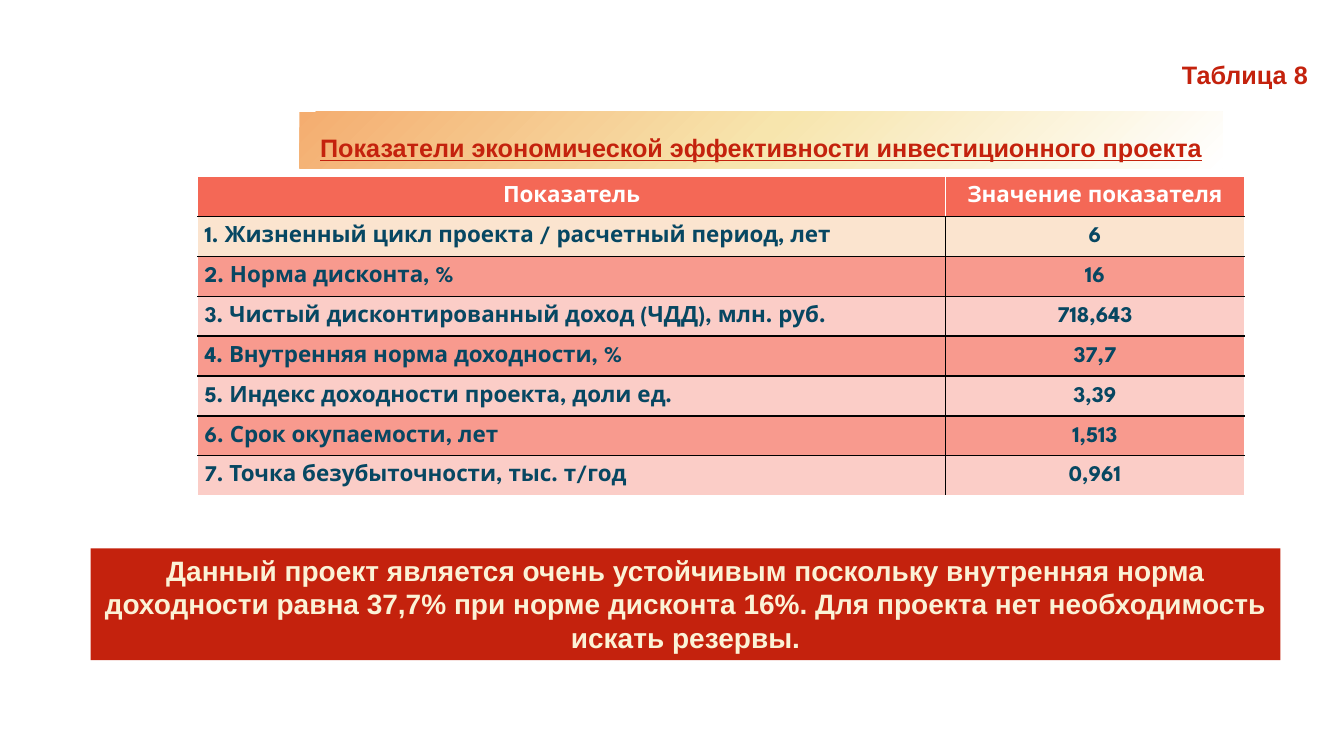
from copy import deepcopy
from dataclasses import dataclass

from pptx import Presentation
from pptx import util as u
from pptx.dml.color import RGBColor
from pptx.enum import shapes, text
from pptx.oxml import parse_xml
from pptx.oxml.ns import nsdecls, qn

RED, NAVY, WHITE, BLACK, CREAM = "C4220D", "074762", "FFFFFF", "000000", "FBF2D6"
HEADER_FILL, FIRST_FILL, DARK_FILL, LIGHT_FILL = "F46856", "FBE4CF", "F89A8E", "FBCDC7"
TITLE_GRADIENT = [(0, "F4AD70"), (0.5, "F7E5AD"), (1, WHITE)]
LEFT, CENTER, RIGHT = text.PP_ALIGN.LEFT, text.PP_ALIGN.CENTER, text.PP_ALIGN.RIGHT


@dataclass
class Style:
    size: float
    color: str
    font: str = "Arial"
    underline: bool = False
    spacing: float = 1.0


@dataclass
class Indicator:
    name: str
    value: str
    fill: str


INDICATORS = [
    Indicator("Показатель", "Значение показателя", HEADER_FILL),
    Indicator("1. Жизненный цикл проекта / расчетный период, лет", "6", FIRST_FILL),
    Indicator("2. Норма дисконта, %", "16", DARK_FILL),
    Indicator("3. Чистый дисконтированный доход (ЧДД), млн. руб.", "718,643", LIGHT_FILL),
    Indicator("4. Внутренняя норма доходности, %", "37,7", DARK_FILL),
    Indicator("5. Индекс доходности проекта, доли ед.", "3,39", LIGHT_FILL),
    Indicator("6. Срок окупаемости, лет", "1,513", DARK_FILL),
    Indicator("7. Точка безубыточности, тыс. т/год", "0,961", LIGHT_FILL),
]


def rgb(value: str) -> RGBColor:
    return RGBColor.from_string(value)


def write(frame, content: str, style: Style, alignment) -> None:
    paragraph = frame.paragraphs[0]
    paragraph.alignment = alignment
    paragraph.line_spacing = style.spacing
    run = paragraph.add_run()
    run.text = content
    run.font.name = style.font
    run.font.size = u.Pt(style.size)
    run.font.bold = True
    run.font.underline = style.underline
    run.font.color.rgb = rgb(style.color)


def add_box(slide, left: float, top: float, width: float, height: float):
    shape = slide.shapes.add_shape(
        shapes.MSO_SHAPE.RECTANGLE,
        u.Inches(left), u.Inches(top), u.Inches(width), u.Inches(height))
    shape.shadow.inherit = False
    shape.line.fill.background()
    shape.text_frame.word_wrap = True
    return shape


def fill_gradient(shape, stops: list) -> None:
    shape.fill.gradient()
    shape.fill.gradient_angle = 315
    first = shape._element.spPr.find(".//" + qn("a:gs"))
    first.addnext(deepcopy(first))
    for stop, (position, color) in zip(shape.fill.gradient_stops, stops):
        stop.position = position
        stop.color.rgb = rgb(color)


def set_borders(cell, colors: dict) -> None:
    properties = cell._tc.get_or_add_tcPr()
    for side in "LRTB":
        properties.append(parse_xml(
            f'<a:ln{side} {nsdecls("a")} w="12700"><a:solidFill>'
            f'<a:srgbClr val="{colors[side]}"/></a:solidFill></a:ln{side}>'))


def add_indicator_table(slide) -> None:
    last = len(INDICATORS) - 1
    height = u.Inches(3.17)
    table = slide.shapes.add_table(
        len(INDICATORS), 2, u.Inches(1.96), u.Inches(1.75), u.Inches(10.38), height).table
    for column, width in zip(table.columns, (7.42, 2.96)):
        column.width = u.Inches(width)
    for row, indicator in enumerate(INDICATORS):
        table.rows[row].height = height // len(INDICATORS)
        header = row == 0
        style = Style(16, WHITE if header else NAVY, "League Spartan", spacing=1.07)
        for column, content in enumerate((indicator.name, indicator.value)):
            cell = table.cell(row, column)
            cell.margin_left = cell.margin_right = u.Inches(0.07)
            cell.margin_top = cell.margin_bottom = 0
            cell.vertical_anchor = text.MSO_ANCHOR.MIDDLE
            inner = WHITE if header else BLACK
            set_borders(cell, {
                "L": inner if column else WHITE,
                "R": WHITE if column else inner,
                "T": inner,
                "B": WHITE if row == last else BLACK,
            })
            cell.fill.solid()
            cell.fill.fore_color.rgb = rgb(indicator.fill)
            write(cell.text_frame, content, style, CENTER if header or column else LEFT)


def main() -> None:
    presentation = Presentation()
    presentation.slide_width = u.Inches(13.33)
    presentation.slide_height = u.Inches(7.5)
    slide = presentation.slides.add_slide(presentation.slide_layouts[6])

    # Table number
    number = slide.shapes.add_textbox(
        u.Inches(11.6), u.Inches(0.54), u.Inches(1.47), u.Inches(0.4))
    number.text_frame.word_wrap = False
    write(number.text_frame, "Таблица 8", Style(18, RED), RIGHT)

    # Title on a gradient band
    title = add_box(slide, 2.97, 1.11, 9.16, 0.56)
    fill_gradient(title, TITLE_GRADIENT)
    title.text_frame.vertical_anchor = text.MSO_ANCHOR.MIDDLE
    write(title.text_frame, "Показатели экономической эффективности инвестиционного проекта",
          Style(18, RED, underline=True, spacing=1.5), CENTER)

    # Indicators
    add_indicator_table(slide)

    # Conclusion
    conclusion = add_box(slide, 0.9, 5.44, 11.8, 1.11)
    conclusion.fill.solid()
    conclusion.fill.fore_color.rgb = rgb(RED)
    conclusion.text_frame.vertical_anchor = text.MSO_ANCHOR.TOP
    write(conclusion.text_frame,
          "Данный проект является очень устойчивым поскольку внутренняя норма доходности "
          "равна 37,7% при норме дисконта 16%. Для проекта нет необходимость искать резервы.",
          Style(20, CREAM), CENTER)

    presentation.save("out.pptx")


if __name__ == "__main__":
    main()
